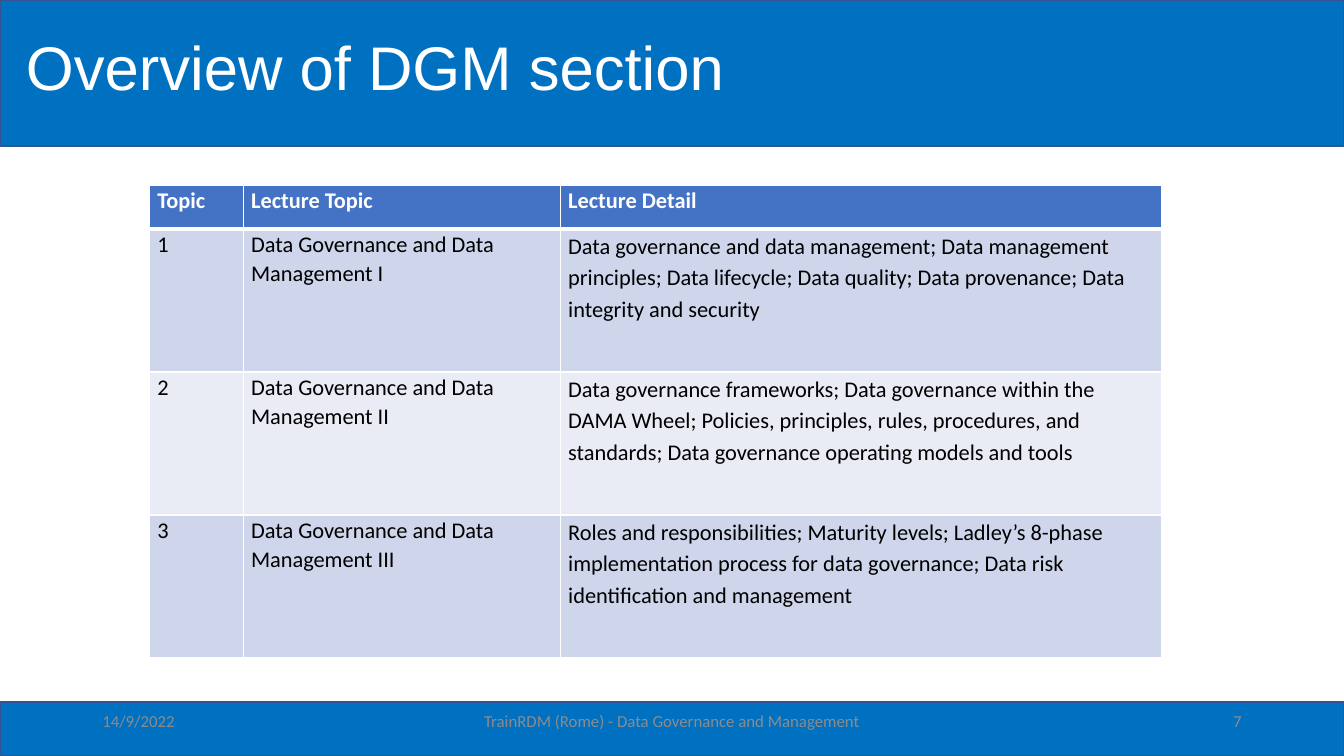
from dataclasses import dataclass

from lxml.etree import SubElement
from pptx import Presentation
from pptx.dml.color import RGBColor
from pptx.enum.shapes import MSO_SHAPE
from pptx.enum.text import MSO_ANCHOR, PP_ALIGN
from pptx.oxml.ns import qn
from pptx.util import Pt

COLORS = {
    "band": "0070C0",
    "band_line": "325491",
    "header": "4472C4",
    "odd_row": "CFD5EA",
    "even_row": "E9EBF5",
    "white": "FFFFFF",
    "black": "000000",
    "footer": "8C8C8C",
}
SLIDE_W, SLIDE_H = 960, 540
COL_WIDTHS = (67, 226.5, 429.5)
HEADER_H, ROW_H = 31, 102.2
HEADINGS = ("Topic", "Lecture Topic", "Lecture Detail")


@dataclass
class Band:
    top: float
    height: float


@dataclass
class Label:
    text: str
    left: float
    top: float
    width: float
    height: float
    size: float = 12
    font: str = "Calibri"
    color: str = "footer"
    align: PP_ALIGN = PP_ALIGN.LEFT
    spacing: float = 1.0


@dataclass
class Lecture:
    topic: str
    detail: str


BANDS = [Band(0, 104.4), Band(501.5, 38.5)]
LABELS = [
    Label("Overview of DGM section", 11.5, -1.5, 861, 104.4, 44, "Arial", "white", spacing=0.9),
    Label("14/9/2022", 66, 500.6, 216, 28.75),
    Label("TrainRDM (Rome) - Data Governance and Management", 318, 500.6, 324, 28.75,
          align=PP_ALIGN.CENTER),
    Label("7", 678, 500.6, 216, 28.75, align=PP_ALIGN.RIGHT),
]
LECTURES = [
    Lecture("Data Governance and Data Management I",
            "Data governance and data management; Data management principles; Data lifecycle; "
            "Data quality; Data provenance; Data integrity and security"),
    Lecture("Data Governance and Data Management II",
            "Data governance frameworks; Data governance within the DAMA Wheel; Policies, "
            "principles, rules, procedures, and standards; Data governance operating models and tools"),
    Lecture("Data Governance and Data Management III",
            "Roles and responsibilities; Maturity levels; Ladley’s 8-phase implementation process "
            "for data governance; Data risk identification and management"),
]


def rgb(name: str) -> RGBColor:
    return RGBColor.from_string(COLORS[name])


def write(tf, text: str, *, size: float = 16, font: str = "Calibri", color: str = "black",
          bold: bool = False, align: PP_ALIGN = PP_ALIGN.LEFT, spacing: float = 1.0,
          after: float = 0) -> None:
    tf.word_wrap = True
    p = tf.paragraphs[0]
    p.alignment = align
    p.line_spacing = spacing
    p.space_after = Pt(after)
    r = p.add_run()
    r.text = text
    r.font.size = Pt(size)
    r.font.name = font
    r.font.bold = bold
    r.font.color.rgb = rgb(color)


def add_band(s, band: Band) -> None:
    sp = s.shapes.add_shape(MSO_SHAPE.RECTANGLE, 0, Pt(band.top), Pt(SLIDE_W), Pt(band.height))
    sp.shadow.inherit = False
    sp.fill.solid()
    sp.fill.fore_color.rgb = rgb("band")
    sp.line.color.rgb = rgb("band_line")
    sp.line.width = Pt(1)


def add_label(s, label: Label) -> None:
    sp = s.shapes.add_textbox(Pt(label.left), Pt(label.top), Pt(label.width), Pt(label.height))
    tf = sp.text_frame
    tf.vertical_anchor = MSO_ANCHOR.MIDDLE
    write(tf, label.text, size=label.size, font=label.font, color=label.color,
          align=label.align, spacing=label.spacing)


def set_borders(cell, top: float, bottom: float) -> None:
    tc_pr = cell._tc.get_or_add_tcPr()
    for side, width in (("L", 1), ("R", 1), ("T", top), ("B", bottom)):
        ln = SubElement(tc_pr, qn(f"a:ln{side}"), w=str(Pt(width)))
        fill = SubElement(ln, qn("a:solidFill"))
        SubElement(fill, qn("a:srgbClr"), val=COLORS["white"])


def fill_cell(cell, text: str, row: int, col: int) -> None:
    header = row == 0
    set_borders(cell, top=3 if row == 1 else 1, bottom=3 if header else 1)
    cell.fill.solid()
    cell.fill.fore_color.rgb = rgb("header" if header else "odd_row" if row % 2 else "even_row")
    cell.margin_left = cell.margin_right = Pt(5.4)
    cell.margin_top = cell.margin_bottom = 0
    write(cell.text_frame, text, color="white" if header else "black", bold=header,
          align=PP_ALIGN.JUSTIFY if header else PP_ALIGN.LEFT,
          spacing=1.15 if col == 2 and not header else 1.07, after=6)


def add_lecture_table(s, lectures: list[Lecture]) -> None:
    rows = [HEADINGS] + [(str(n), x.topic, x.detail) for n, x in enumerate(lectures, 1)]
    height = HEADER_H + ROW_H * len(lectures)
    table = s.shapes.add_table(len(rows), len(COL_WIDTHS), Pt(107), Pt(132.5),
                               Pt(sum(COL_WIDTHS)), Pt(height)).table
    table.horz_banding = False
    for column, width in zip(table.columns, COL_WIDTHS):
        column.width = Pt(width)
    for i, texts in enumerate(rows):
        table.rows[i].height = Pt(ROW_H if i else HEADER_H)
        for j, text in enumerate(texts):
            fill_cell(table.cell(i, j), text, i, j)


def main() -> None:
    prs = Presentation()
    prs.slide_width, prs.slide_height = Pt(SLIDE_W), Pt(SLIDE_H)
    s = prs.slides.add_slide(prs.slide_layouts[6])
    for band in BANDS:
        add_band(s, band)
    add_lecture_table(s, LECTURES)
    for label in LABELS:
        add_label(s, label)
    prs.save("out.pptx")


if __name__ == "__main__":
    main()
